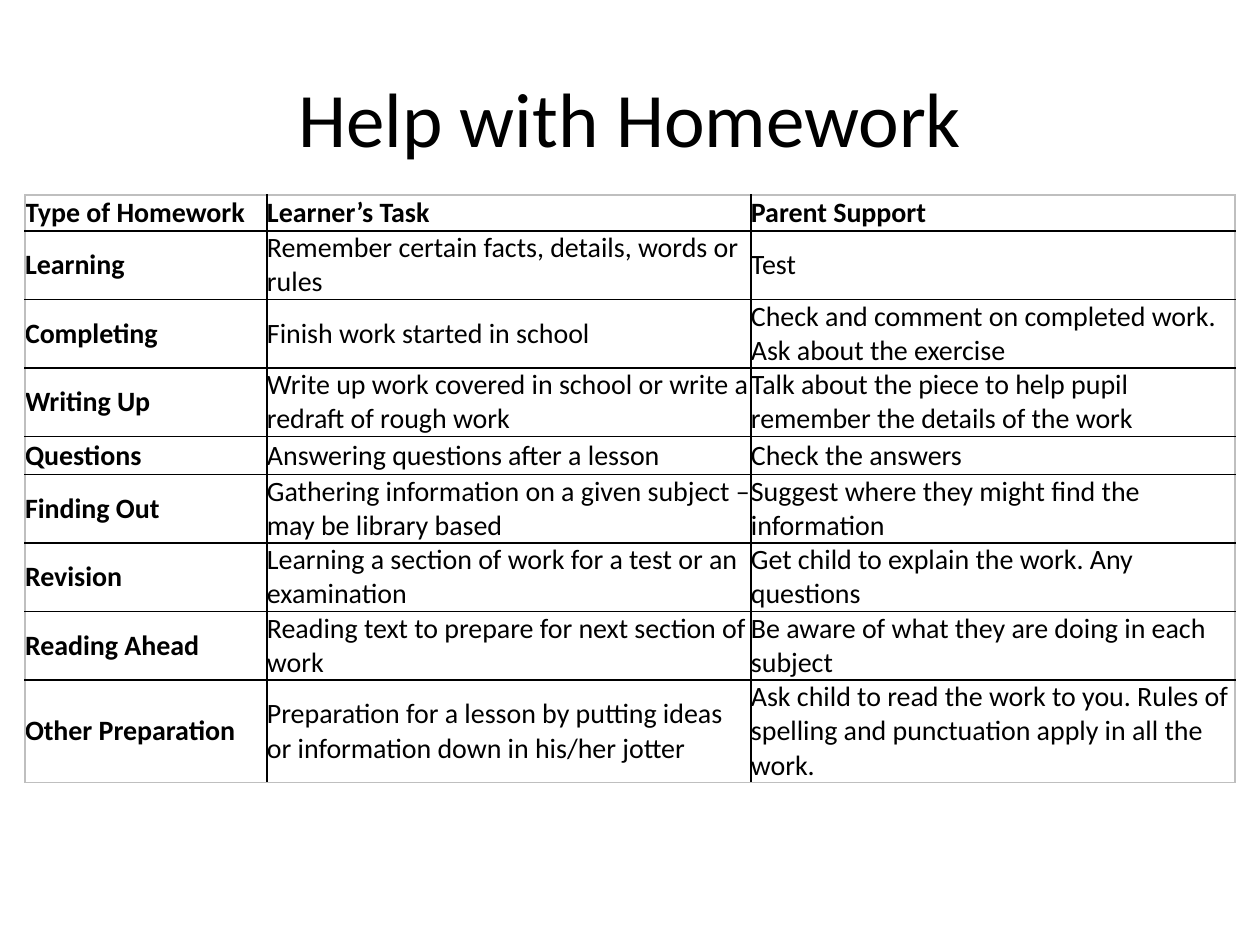
from dataclasses import dataclass

from lxml.etree import SubElement
from pptx import Presentation
from pptx.dml.color import RGBColor
from pptx.enum.text import MSO_ANCHOR, PP_ALIGN
from pptx.oxml.ns import qn
from pptx.util import Emu, Pt

TITLE = "Help with Homework"
HEADINGS = ("Type of Homework", "Learner’s Task", "Parent Support")
HOMEWORK = [
    ("Learning", "Remember certain facts, details, words or rules", "Test"),
    ("Completing", "Finish work started in school",
     "Check and comment on completed work. Ask about the exercise"),
    ("Writing Up", "Write up work covered in school or write a redraft of rough work",
     "Talk about the piece to help pupil remember the details of the work"),
    ("Questions", "Answering questions after a lesson", "Check the answers"),
    ("Finding Out", "Gathering information on a given subject – may be library based",
     "Suggest where they might find the information"),
    ("Revision", "Learning a section of work for a test or an examination",
     "Get child to explain the work. Any questions"),
    ("Reading Ahead", "Reading text to prepare for next section of work",
     "Be aware of what they are doing in each subject"),
    ("Other Preparation",
     "Preparation for a lesson by putting ideas or information down in his/her jotter",
     "Ask child to read the work to you. Rules of spelling and punctuation apply in all the work."),
]

PX = 914400 // 126
SLIDE_SIZE = (1260, 945)
TITLE_BOX = (63, 38, 1134, 157)
TABLE_LEFT, TABLE_TOP = 25, 195
COLUMN_WIDTHS = (242, 484, 484)
ROW_HEIGHTS = (36, 68, 68, 68, 38, 68, 68, 68, 102)


@dataclass(frozen=True)
class Theme:
    font: str = "Calibri"
    text: str = "000000"
    paper: str = "FFFFFF"
    inner_line: str = "000000"
    outer_line: str = "BFBFBF"
    title_size: int = 44
    table_size: int = 16
    line_width: int = 1


THEME = Theme()


def px(length):
    return Emu(length * PX)


def write_text(frame, text, *, size, bold=False, align=PP_ALIGN.LEFT):
    frame.word_wrap = True
    paragraph = frame.paragraphs[0]
    paragraph.alignment = align
    run = paragraph.add_run()
    run.text = text
    run.font.name = THEME.font
    run.font.size = Pt(size)
    run.font.bold = bold
    run.font.color.rgb = RGBColor.from_string(THEME.text)


def set_borders(cell, outer_sides):
    """Draw all four cell edges, lighter on the sides at the table's rim."""
    properties = cell._tc.get_or_add_tcPr()
    for position, side in enumerate("LRTB"):
        line = SubElement(properties, qn(f"a:ln{side}"), w=str(Pt(THEME.line_width)))
        fill = SubElement(line, qn("a:solidFill"))
        color = THEME.outer_line if side in outer_sides else THEME.inner_line
        SubElement(fill, qn("a:srgbClr"), val=color)
        properties.insert(position, line)


def add_title(slide):
    title = slide.shapes.title
    title.left, title.top, title.width, title.height = map(px, TITLE_BOX)
    title.text_frame.vertical_anchor = MSO_ANCHOR.MIDDLE
    write_text(title.text_frame, TITLE, size=THEME.title_size, align=PP_ALIGN.CENTER)


def add_homework_table(slide):
    rows = [HEADINGS, *HOMEWORK]
    last_row, last_column = len(rows) - 1, len(HEADINGS) - 1
    table = slide.shapes.add_table(
        len(rows), len(HEADINGS), px(TABLE_LEFT), px(TABLE_TOP),
        px(sum(COLUMN_WIDTHS)), px(sum(ROW_HEIGHTS))).table
    table.horz_banding = False
    for column, width in zip(table.columns, COLUMN_WIDTHS):
        column.width = px(width)
    for row, height in zip(table.rows, ROW_HEIGHTS):
        row.height = px(height)

    for r, texts in enumerate(rows):
        for c, text in enumerate(texts):
            cell = table.cell(r, c)
            cell.margin_left = cell.margin_right = cell.margin_top = cell.margin_bottom = 0
            cell.vertical_anchor = MSO_ANCHOR.MIDDLE
            cell.fill.solid()
            cell.fill.fore_color.rgb = RGBColor.from_string(THEME.paper)
            rim = {"L": c == 0, "R": c == last_column, "T": r == 0, "B": r == last_row}
            set_borders(cell, [side for side, outer in rim.items() if outer])
            write_text(cell.text_frame, text, size=THEME.table_size, bold=r == 0 or c == 0)


def main():
    presentation = Presentation()
    presentation.slide_width, presentation.slide_height = map(px, SLIDE_SIZE)
    slide = presentation.slides.add_slide(presentation.slide_layouts[5])
    add_title(slide)
    add_homework_table(slide)
    presentation.save("out.pptx")


if __name__ == "__main__":
    main()
